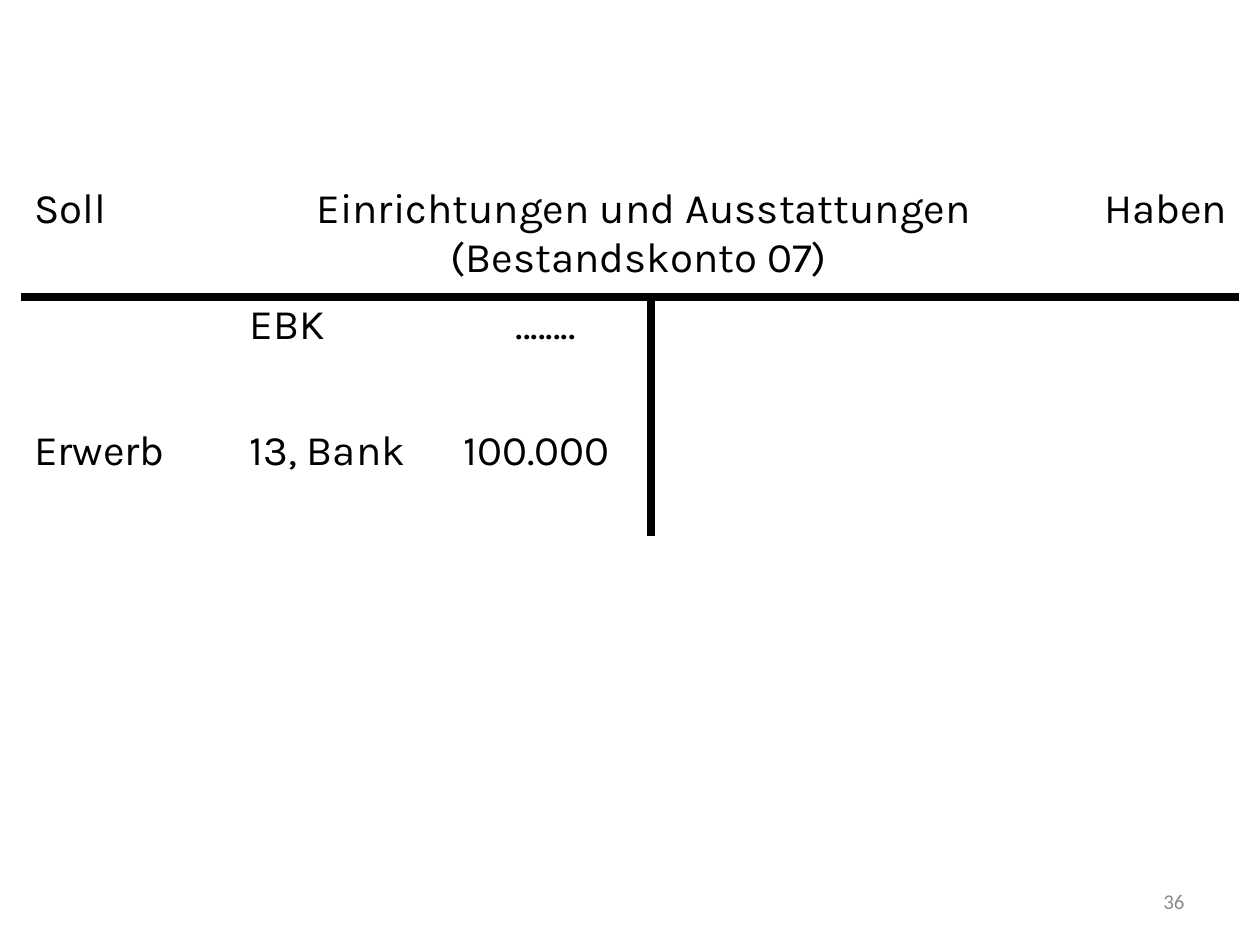
from lxml import etree
from pptx import Presentation
from pptx.dml.color import RGBColor
from pptx.enum.shapes import MSO_CONNECTOR
from pptx.enum.text import MSO_ANCHOR, PP_ALIGN
from pptx.oxml.ns import qn
from pptx.util import Inches, Pt

LEFT, MID, RIGHT = PP_ALIGN.LEFT, PP_ALIGN.CENTER, PP_ALIGN.RIGHT
LINE = MSO_CONNECTOR.STRAIGHT
MIDDLE = MSO_ANCHOR.MIDDLE


def color(code):
    return RGBColor.from_string(code)


def write(frame, text, align, font, size, code):
    frame.text = text
    para = frame.paragraphs[0]
    para.alignment = align
    face = para.runs[0].font
    face.name = font
    face.size = Pt(size)
    face.color.rgb = color(code)


prs = Presentation()
prs.slide_width = Inches(10)
prs.slide_height = Inches(7.5)
slide = prs.slides.add_slide(prs.slide_layouts[6])

cols = [1.71, 1.7, 1.58, 1.24, 1.94, 1.5]
rows = [0.92, 1, 0.92]
table = slide.shapes.add_table(
    len(rows), len(cols), Inches(0.17), Inches(1.42), Inches(9.67), Inches(2.84)
).table
table.first_row = False
table.horz_banding = False
for col, width in zip(table.columns, cols):
    col.width = Inches(width)
for row, height in zip(table.rows, rows):
    row.height = Inches(height)
for cell in table.iter_cells():
    cell.fill.background()
table.cell(0, 1).merge(table.cell(0, 4))

entries = [
    (0, 0, "Soll", LEFT),
    (0, 1, "Einrichtungen und Ausstattungen (Bestandskonto 07) ", MID),
    (0, 5, "Haben", RIGHT),
    (1, 1, "EBK", LEFT),
    (1, 2, "........ ", MID),
    (2, 0, "Erwerb", LEFT),
    (2, 1, "13, Bank", LEFT),
    (2, 2, "100.000", LEFT),
]
for row, col, text, align in entries:
    write(table.cell(row, col).text_frame, text, align, "Karla", 24, "000000")

for x1, y1, x2, y2 in [(0.17, 2.36, 9.83, 2.36), (5.17, 2.36, 5.17, 4.25)]:
    rule = slide.shapes.add_connector(
        LINE, Inches(x1), Inches(y1), Inches(x2), Inches(y2)
    )
    rule.line.color.rgb = color("000000")
    rule.line.width = Pt(4.5)
    etree.SubElement(rule._element.spPr, qn("a:effectLst"))

page = slide.shapes.add_textbox(Inches(7.17), Inches(6.95), Inches(2.33), Inches(0.4))
frame = page.text_frame
frame.word_wrap = True
frame.vertical_anchor = MIDDLE
write(frame, "36", RIGHT, "Calibri", 12, "8C8C8C")

prs.save("out.pptx")
